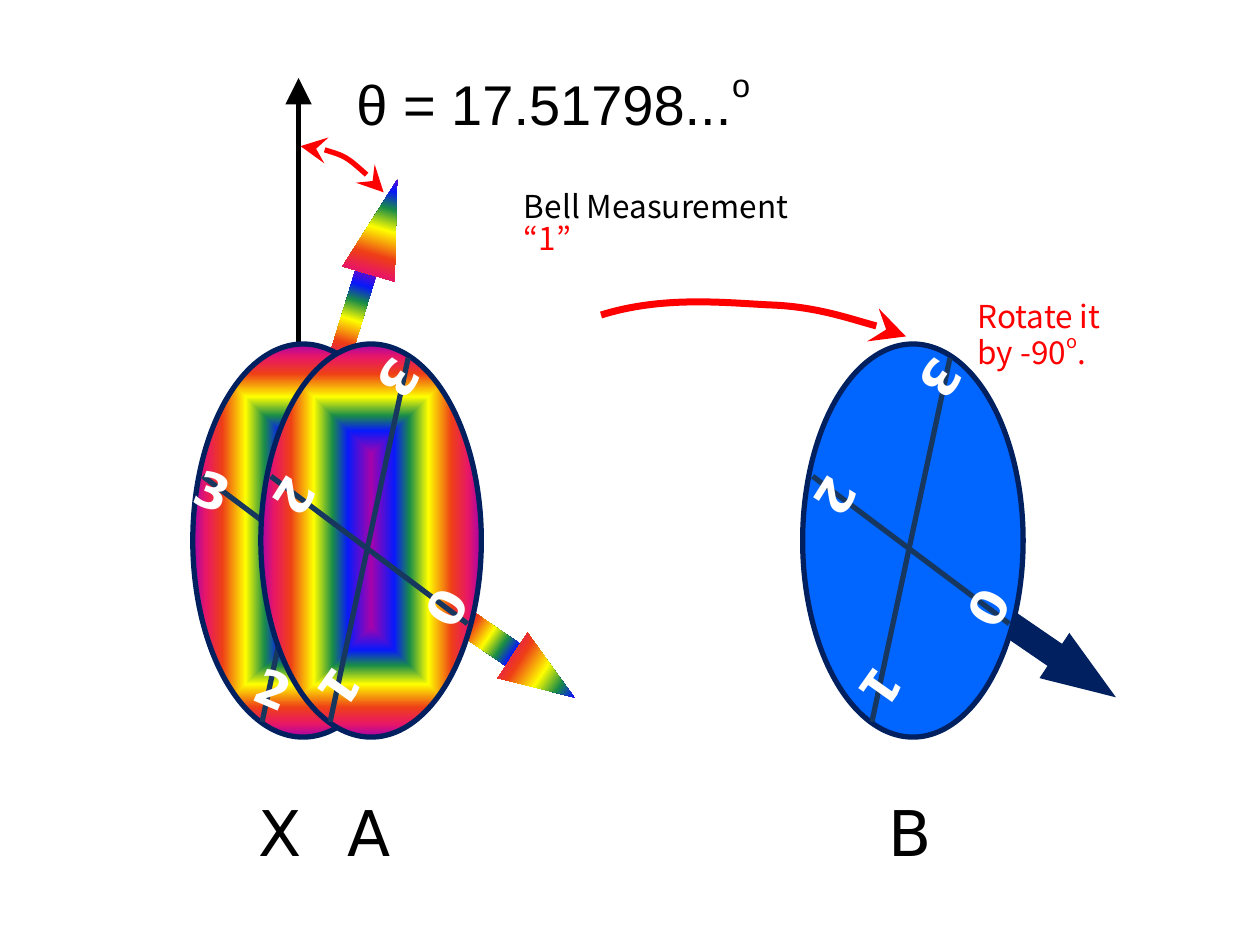
from dataclasses import dataclass
from typing import NamedTuple

from lxml import etree
from pptx import Presentation
from pptx.dml.color import RGBColor
from pptx.enum.shapes import MSO_CONNECTOR, MSO_SHAPE
from pptx.oxml.ns import qn
from pptx.util import Inches, Pt

ARC, ELLIPSE = MSO_SHAPE.ARC, MSO_SHAPE.OVAL
RECTANGLE, TRIANGLE = MSO_SHAPE.RECTANGLE, MSO_SHAPE.ISOSCELES_TRIANGLE
STRAIGHT = MSO_CONNECTOR.STRAIGHT

COLUMNS, ROWS = 100, 75
SLIDE_WIDTH, SLIDE_HEIGHT = Inches(10), Inches(7.5)
BLACK, WHITE, RED = "000000", "FFFFFF", "FF0000"
NAVY, SPOKE_BLUE, WHEEL_BLUE = "002060", "17375E", "0066FF"
RAINBOW = [(0, "A603AB"), (21, "0819FB"), (35, "1A8D48"), (52, "FFFF00"),
           (73, "EE3F17"), (88, "E81766"), (100, "A603AB")]
SANS, ARIAL, NOTO = "DejaVu Sans", "Arial", "Noto Sans CJK KR"

WHEEL_TOP, WHEEL_WIDTH, WHEEL_HEIGHT = 27.3, 17.5, 31.2
SPOKES = [(11.7, 1.1, 5.5, 30), (16.4, 22.2, 0.8, 10.5)]


class Frame(NamedTuple):
    column: float
    row: float
    columns: float
    rows: float
    turn: float = 0


class Span(NamedTuple):
    text: str
    color: str = BLACK
    raised: bool = False


class Digit(NamedTuple):
    text: str
    frame: Frame


@dataclass
class Wheel:
    name: str
    column: float
    label_column: float
    shaft: Frame
    tip: Frame
    digits: list[Digit]
    solid: bool = False


SIDE_SHAFT = Frame(17.1, 20.6, 2.1, 5.6, 124.4)
SIDE_TIP = Frame(20.3, 23.4, 4.3, 5.9, 123.4)
TURNED_DIGITS = [
    Digit("3", Frame(7.5, 0.6, 6.2, 5.7, 123.9)),
    Digit("0", Frame(12.5, 18.2, 4.7, 5.7, 118.5)),
    Digit("2", Frame(1, 9, 3.9, 5.7, 122.1)),
    Digit("1", Frame(4, 24.5, 4.7, 5.7, 125.3)),
]
UPRIGHT_DIGITS = [
    Digit("0", Frame(9.2, 1, 6.2, 5.7, 13.6)),
    Digit("1", Frame(12.6, 18.1, 4.7, 5.7, 19.6)),
    Digit("3", Frame(-0.7, 8.6, 3.9, 5.7, 19.9)),
    Digit("2", Frame(4.1, 24.5, 4.7, 5.7, 23)),
]
WHEELS = [
    Wheel("X", 15.3, 19.5, Frame(11.8, -6.2, 1.7, 8.2, 17),
          Frame(12.9, -13.2, 4.3, 7.8, 16.3), UPRIGHT_DIGITS),
    Wheel("A", 20.7, 26.6, SIDE_SHAFT, SIDE_TIP, TURNED_DIGITS),
    Wheel("B", 63.7, 69.5, SIDE_SHAFT, SIDE_TIP, TURNED_DIGITS, True),
]


def rgb(color: str) -> RGBColor:
    return RGBColor.from_string(color)


def across(columns: float) -> int:
    return round(SLIDE_WIDTH * columns / COLUMNS)


def down(rows: float) -> int:
    return round(SLIDE_HEIGHT * rows / ROWS)


def bounds(frame: Frame) -> tuple[int, int, int, int]:
    return across(frame.column), down(frame.row), across(frame.columns), down(frame.rows)


def on_wheel(wheel: Wheel, frame: Frame) -> Frame:
    return frame._replace(column=wheel.column + frame.column, row=WHEEL_TOP + frame.row)


def child(parent, tag: str, **attributes):
    return etree.SubElement(parent, qn(tag), attributes)


def style_line(shape, color: str, width: float, head: str = "", tail: str = "") -> None:
    shape.line.color.rgb = rgb(color)
    shape.line.width = Pt(width)
    outline = shape.line._get_or_add_ln()
    for tag, arrow in (("a:headEnd", head), ("a:tailEnd", tail)):
        if arrow:
            child(outline, tag, type=arrow, w="lg", len="lg")


def fill_rainbow(shape, radial: bool) -> None:
    shape.fill.gradient()
    gradient = shape._element.spPr.find(qn("a:gradFill"))
    gradient.clear()
    gradient.set("rotWithShape", "1")
    stops = child(gradient, "a:gsLst")
    for percent, color in RAINBOW:
        stop = child(stops, "a:gs", pos=str(percent * 1000))
        child(stop, "a:srgbClr", val=color)
    if radial:
        focus = child(gradient, "a:path", path="shape")
        child(focus, "a:fillToRect", l="50000", t="50000", r="50000", b="50000")
    else:
        child(gradient, "a:lin", ang="5400000", scaled="1")


def add_figure(page, kind, frame: Frame, color: str = "", radial: bool = False):
    shape = page.shapes.add_shape(kind, *bounds(frame))
    shape.rotation = frame.turn
    shape.shadow.inherit = False
    shape.line.fill.background()
    if color:
        shape.fill.solid()
        shape.fill.fore_color.rgb = rgb(color)
    else:
        fill_rainbow(shape, radial)
    return shape


def add_line(page, start: tuple, end: tuple, color: str, tail: str = "") -> None:
    line = page.shapes.add_connector(STRAIGHT, across(start[0]), down(start[1]),
                                     across(end[0]), down(end[1]))
    style_line(line, color, 3, tail=tail)
    child(line._element.spPr, "a:effectLst")


def add_text(page, frame: Frame, paragraphs: list[list[Span]], font: str, size: float,
             bold: bool = False, spacing: float = 1) -> None:
    box = page.shapes.add_textbox(*bounds(frame))
    box.rotation = frame.turn
    box.text_frame.word_wrap = True
    for index, spans in enumerate(paragraphs):
        para = box.text_frame.add_paragraph() if index else box.text_frame.paragraphs[0]
        para.line_spacing = spacing
        for span in spans:
            if span.text == "\n":
                para.add_line_break()
                continue
            run = para.add_run()
            run.text = span.text
            run.font.name, run.font.size, run.font.bold = font, Pt(size), bold
            run.font.color.rgb = rgb(span.color)
            if span.raised:
                run.font._element.set("baseline", "50000")


def add_wheel(page, wheel: Wheel) -> None:
    arrow_color = NAVY if wheel.solid else ""
    add_figure(page, RECTANGLE, on_wheel(wheel, wheel.shaft), arrow_color)
    disc = add_figure(page, ELLIPSE, Frame(wheel.column, WHEEL_TOP, WHEEL_WIDTH, WHEEL_HEIGHT),
                      WHEEL_BLUE if wheel.solid else "", radial=True)
    style_line(disc, NAVY, 3)
    for x1, y1, x2, y2 in SPOKES:
        add_line(page, (wheel.column + x1, WHEEL_TOP + y1),
                 (wheel.column + x2, WHEEL_TOP + y2), SPOKE_BLUE)
    for digit in wheel.digits:
        add_text(page, on_wheel(wheel, digit.frame), [[Span(digit.text, WHITE)]], SANS, 28, True)
    tip = add_figure(page, TRIANGLE, on_wheel(wheel, wheel.tip), arrow_color)
    tip.adjustments[0] = 0.52
    add_text(page, Frame(wheel.label_column, 62.5, 11.7, 7.1), [[Span(wheel.name)]], SANS, 36)


def add_curve(page, points: list[tuple[float, float]]) -> None:
    start, *rest = [(across(x), down(y)) for x, y in points]
    builder = page.shapes.build_freeform(*start)
    builder.add_line_segments(rest, close=False)
    curve = builder.convert_to_shape()
    outline = next(curve._element.iter(qn("a:path")))
    segments = outline.findall(qn("a:lnTo"))
    for first in range(0, len(segments), 3):
        bezier = child(outline, "a:cubicBezTo")
        for segment in segments[first:first + 3]:
            bezier.append(segment[0])
            outline.remove(segment)
    curve.shadow.inherit = False
    curve.fill.background()
    style_line(curve, RED, 4, tail="stealth")


def main() -> None:
    deck = Presentation()
    deck.slide_width, deck.slide_height = SLIDE_WIDTH, SLIDE_HEIGHT
    page = deck.slides.add_slide(deck.slide_layouts[6])
    add_line(page, (23.7, 27.7), (23.7, 6.2), BLACK, "triangle")
    angle = add_figure(page, ARC, Frame(9.4, 11.6, 28.9, 66.5))
    angle.fill.background()
    angle.adjustments[0], angle.adjustments[1] = 162, 169.54
    style_line(angle, RED, 3, "stealth", "stealth")
    for wheel in WHEELS:
        add_wheel(page, wheel)
    add_text(page, Frame(27.3, 4.7, 43.8, 6.4),
             [[Span("θ = 17.51798..."), Span("ο", raised=True)]], ARIAL, 32)
    add_text(page, Frame(40.6, 14.8, 25.8, 13.1),
             [[Span("Bell Measurement")], [Span("“1”", RED)]], NOTO, 18, spacing=0.85)
    add_curve(page, [(47.7, 25), (52.5, 23.5), (57.3, 24), (61, 24.2), (64.8, 24.3),
                     (68.3, 25.6), (70.1, 26), (71.9, 26.4), (71.9, 26.5), (71.9, 26.7)])
    add_text(page, Frame(76.6, 23.4, 20.3, 9.1),
             [[Span("Rotate it", RED), Span("\n"), Span("by -90", RED),
               Span("o", RED, True), Span(".", RED)]], NOTO, 18, spacing=0.9)
    deck.save("out.pptx")


if __name__ == "__main__":
    main()
